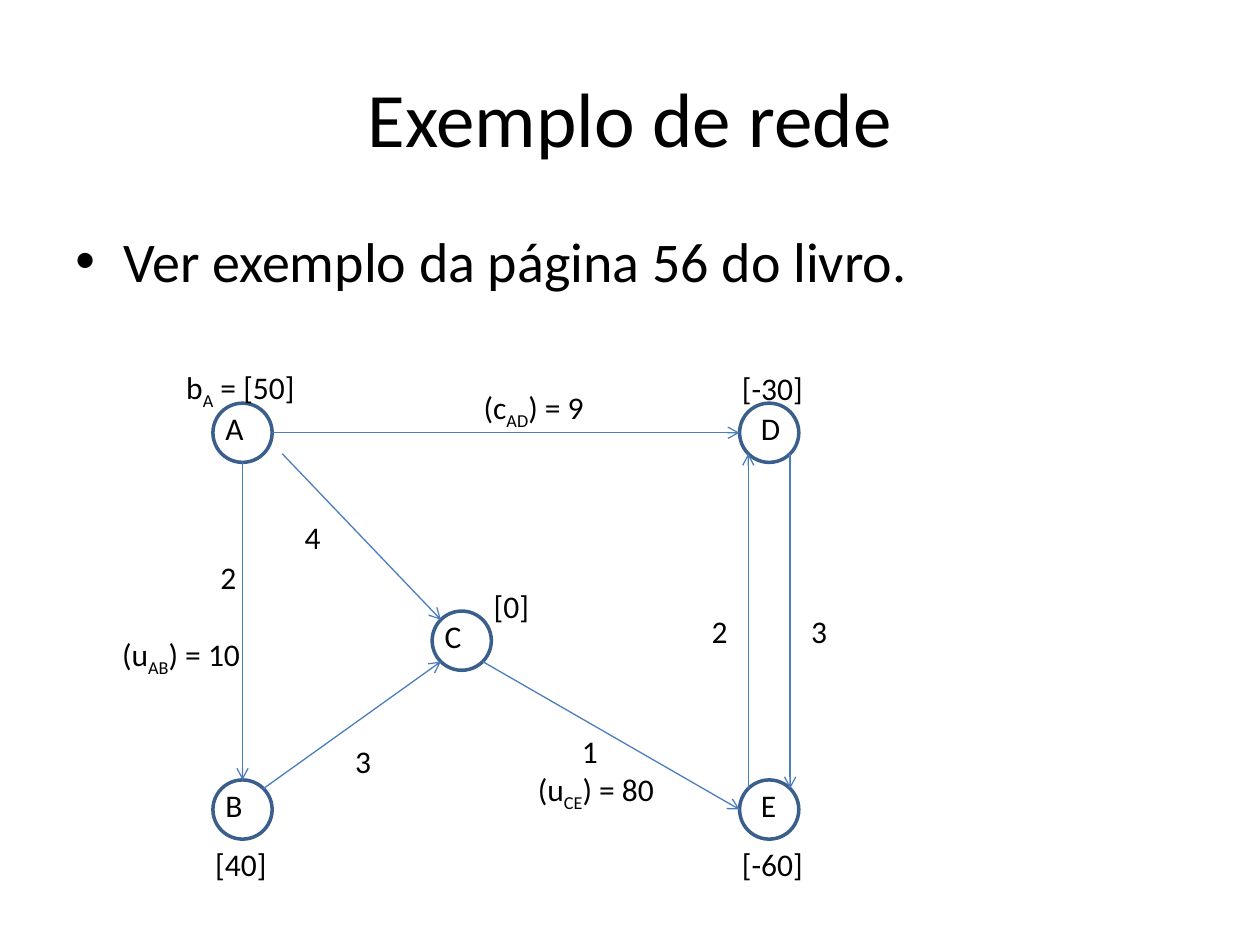
from lxml import etree
from pptx import Presentation
from pptx import util as u
from pptx.dml.color import RGBColor
from pptx.enum import shapes, text
from pptx.oxml.ns import qn

INK = {"text": "000000", "ring": "3A5F8C", "edge": "4B7EBC"}
INK = {name: RGBColor.from_string(code) for name, code in INK.items()}
FONT = "Calibri"

deck = Presentation()
deck.slide_width, deck.slide_height = u.Inches(10), u.Inches(7.5)
unit = deck.slide_width / 100  # all lengths are hundredths of the slide's width
slide = deck.slides.add_slide(deck.slide_layouts[5])


def span(*parts):
    return [round(part * unit) for part in parts]


def label(words, left, top, wide, high=4, size=18):
    """Add a text box; parts of words between underscores are subscripts."""
    box = slide.shapes.add_textbox(*span(left, top, wide, high))
    box.text_frame.word_wrap = True
    para = box.text_frame.paragraphs[0]
    para.font.name, para.font.size = FONT, u.Pt(size)
    para.font.color.rgb = INK["text"]
    for spot, part in enumerate(words.split("_")):
        run = para.add_run()
        run.text = part
        if spot % 2:
            run._r.get_or_add_rPr().set("baseline", "-25000")
    return para


# Title and bullet
title = slide.shapes.title
title.left, title.top, title.width, title.height = span(5, 3, 90, 12.5)
title.text_frame.text = "Exemplo de rede"
title.text_frame.vertical_anchor = text.MSO_ANCHOR.MIDDLE
head = title.text_frame.paragraphs[0]
head.alignment = text.PP_ALIGN.CENTER
head.font.name, head.font.size = FONT, u.Pt(44)
head.font.color.rgb = INK["text"]

point = label("Ver exemplo da página 56 do livro.", 5, 17.5, 90, 10.6, 32)
point.space_before = u.Pt(6.4)
props = point._p.get_or_add_pPr()
inset = u.Inches(0.38)
props.set("marL", str(inset))
props.set("indent", str(-inset))
etree.SubElement(props, qn("a:buFont")).set("typeface", "Arial")
etree.SubElement(props, qn("a:buChar")).set("char", "•")

# Nodes: centre of each ring, and the shift of its letter
SIZE = 4.7
HALF = SIZE / 2
DIAG = HALF * 0.5 ** 0.5
LEFT, MID, RIGHT = 19.25, 36.65, 61.05
TOP, LOW, BASE = 34.35, 50.85, 64.25
nodes = {
    "A": (LEFT, TOP, 0),
    "C": (MID, LOW, 0),
    "E": (RIGHT, BASE, 0.7),
    "B": (LEFT, BASE, 0),
    "D": (RIGHT, TOP, 0.7),
}
for name, (x, y, shift) in nodes.items():
    ring = slide.shapes.add_shape(
        shapes.MSO_SHAPE.OVAL, *span(x - HALF, y - HALF, SIZE, SIZE))
    ring.shadow.inherit = False
    ring.fill.background()
    ring.line.color.rgb = INK["ring"]
    ring.line.width = u.Pt(2)
    label(name, x - HALF + shift, y - HALF, SIZE)

# Edges: each end is a node and a compass side of its ring
sides = {
    "n": (0, -HALF), "s": (0, HALF), "w": (-HALF, 0), "e": (HALF, 0),
    "nw": (-DIAG, -DIAG), "ne": (DIAG, -DIAG),
    "sw": (-DIAG, DIAG), "se": (DIAG, DIAG),
    "off": (3.15, DIAG),  # clear of the ring
}
edges = [
    ("A", "off", "C", "nw"), ("C", "se", "E", "w"), ("A", "e", "D", "w"),
    ("B", "ne", "C", "sw"), ("E", "nw", "D", "sw"), ("D", "se", "E", "ne"),
    ("A", "s", "B", "n"),
]
for start, exit, end, entry in edges:
    ends = []
    for node, side in ((start, exit), (end, entry)):
        ends += [nodes[node][axis] + sides[side][axis] for axis in (0, 1)]
    edge = slide.shapes.add_connector(
        shapes.MSO_CONNECTOR.STRAIGHT, *span(*ends))
    edge.line.color.rgb = INK["edge"]
    edge.line.width = u.Pt(0.75)
    etree.SubElement(edge.line._get_or_add_ln(), qn("a:tailEnd")).set("type", "arrow")
    etree.SubElement(edge._element.spPr, qn("a:effectLst"))

# Supplies, costs and capacities: words, left, top, width
for note in [
    ("b_A_ = [50]", 13.8, 28.7, 11.4),
    ("[-30]", 57.9, 28.8, 7.1),
    ("[40]", 16.1, 66.6, 7.1),
    ("[0]", 38.2, 46.1, 7.1),
    ("[-60]", 57.9, 66.6, 7.1),
    ("2", 55.5, 48.1, 3.8),
    ("3", 63.4, 48.1, 4.7),
    ("4", 23.2, 40.6, 3.9),
    ("3", 27.2, 58.4, 4.7),
    ("1", 45.2, 57.6, 3.9),
    ("(u_CE_) = 80", 41.7, 60.6, 13.8),
    ("(c_AD_) = 9", 37.4, 30.3, 11.4),
    ("2", 16.5, 43.8, 3.9),
    ("(u_AB_) = 10", 8.7, 49.9, 13.8),
]:
    label(*note)

deck.save("out.pptx")
